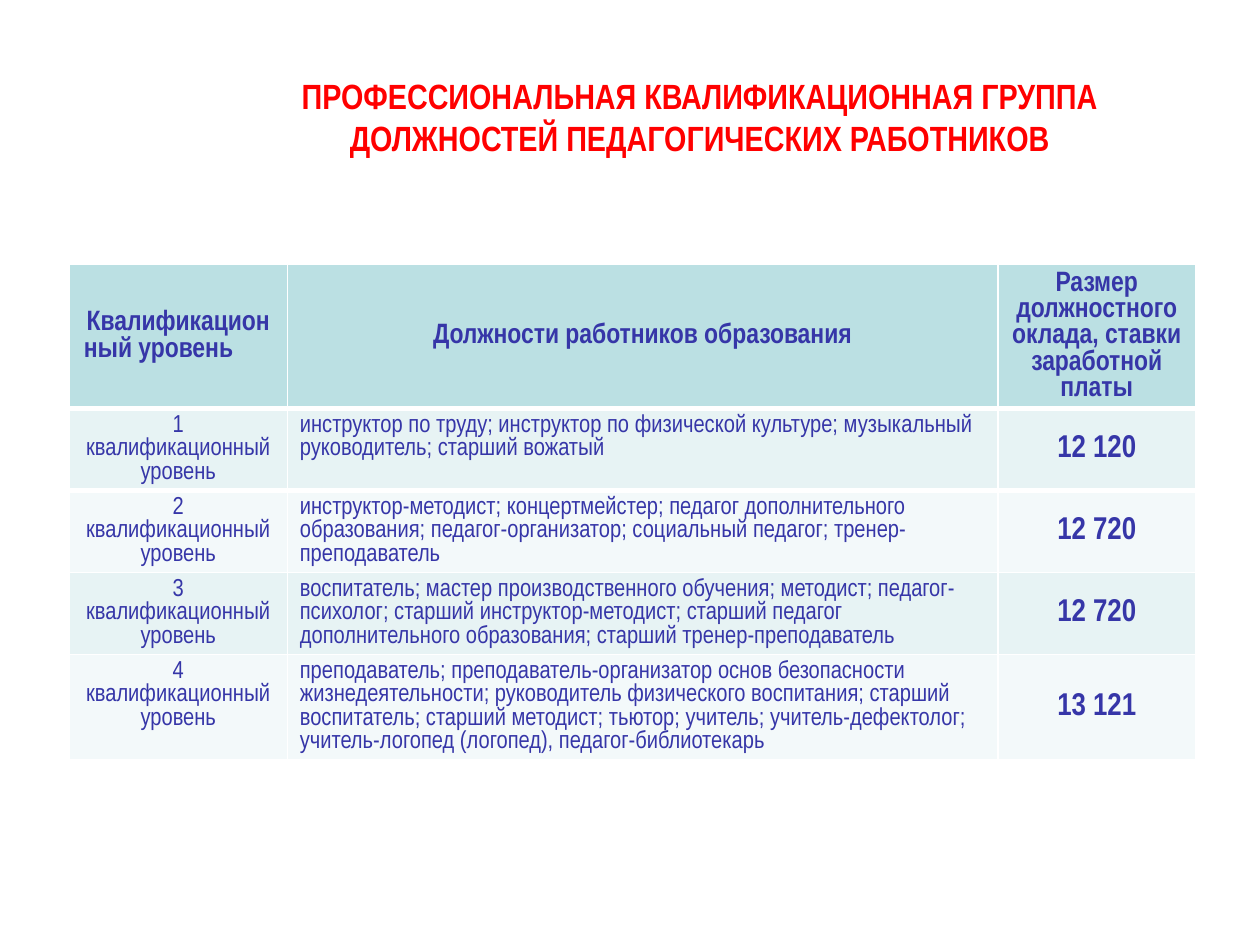
from lxml import etree
from pptx import Presentation
from pptx.dml.color import RGBColor
from pptx.enum.text import MSO_ANCHOR, PP_ALIGN
from pptx.oxml.ns import qn
from pptx.util import Inches, Pt

CENTER, LEFT = PP_ALIGN.CENTER, PP_ALIGN.LEFT
TOP, MIDDLE = MSO_ANCHOR.TOP, MSO_ANCHOR.MIDDLE
RED = RGBColor(0xFF, 0x00, 0x00)
WHITE = RGBColor(0xFF, 0xFF, 0xFF)
INDIGO = RGBColor(0x36, 0x36, 0xA8)
HEADER_FILL = RGBColor(0xBB, 0xE0, 0xE3)
BAND_FILLS = [RGBColor(0xE7, 0xF3, 0xF4), RGBColor(0xF3, 0xF9, 0xFA)]
FONT = "Arial Narrow"


def add_text(paragraph, text, size, color, bold, alignment):
    paragraph.alignment = alignment
    run = paragraph.add_run()
    run.text = text
    run.font.name = FONT
    run.font.size = Pt(size)
    run.font.bold = bold
    run.font.color.rgb = color


def fill_cell(cell, text, size, bold, alignment, anchor, fill):
    cell.fill.solid()
    cell.fill.fore_color.rgb = fill
    cell.vertical_anchor = anchor
    add_text(cell.text_frame.paragraphs[0], text, size, INDIGO, bold, alignment)


presentation = Presentation()
presentation.slide_width = Inches(10)
presentation.slide_height = Inches(7.5)
slide = presentation.slides.add_slide(presentation.slide_layouts[5])

title = slide.shapes.title
title.left, title.top = Inches(1.61), Inches(0.3)
title.width, title.height = Inches(7.89), Inches(1.25)
title.text_frame.vertical_anchor = MIDDLE
add_text(
    title.text_frame.paragraphs[0],
    "ПРОФЕССИОНАЛЬНАЯ КВАЛИФИКАЦИОННАЯ ГРУППА ДОЛЖНОСТЕЙ ПЕДАГОГИЧЕСКИХ РАБОТНИКОВ",
    20, RED, True, CENTER,
)

headers = [
    "Квалификационный уровень \t",
    "Должности работников образования",
    "Размер должностного оклада, ставки заработной платы",
]
levels = [
    ("инструктор по труду; инструктор по физической культуре; музыкальный "
     "руководитель; старший вожатый", "12 120"),
    ("инструктор-методист; концертмейстер; педагог дополнительного образования; "
     "педагог-организатор; социальный педагог; тренер-преподаватель", "12 720"),
    ("воспитатель; мастер производственного обучения; методист; педагог-психолог; "
     "старший инструктор-методист; старший педагог дополнительного образования; "
     "старший тренер-преподаватель", "12 720"),
    ("преподаватель; преподаватель-организатор основ безопасности "
     "жизнедеятельности; руководитель физического воспитания; старший воспитатель; "
     "старший методист; тьютор; учитель; учитель-дефектолог; учитель-логопед "
     "(логопед), педагог-библиотекарь", "13 121"),
]
column_widths = [1.73, 5.64, 1.57]
row_heights = [1.14, 0.65, 0.65, 0.65, 0.83]

table = slide.shapes.add_table(
    len(row_heights), len(column_widths), Inches(0.55), Inches(2.1),
    Inches(sum(column_widths)), Inches(sum(row_heights)),
).table
for column, width in zip(table.columns, column_widths):
    column.width = Inches(width)
for row, height in zip(table.rows, row_heights):
    row.height = Inches(height)

for column_index, header in enumerate(headers):
    fill_cell(table.cell(0, column_index), header, 16, True, CENTER, MIDDLE, HEADER_FILL)

for level, (positions, salary) in enumerate(levels, start=1):
    fill = BAND_FILLS[(level - 1) % 2]
    level_name = f"{level} квалификационный уровень"
    fill_cell(table.cell(level, 0), level_name, 14, False, CENTER, TOP, fill)
    fill_cell(table.cell(level, 1), positions, 14, False, LEFT, TOP, fill)
    fill_cell(table.cell(level, 2), salary, 18, True, CENTER, MIDDLE, fill)

for row_index, edge in enumerate(["a:lnB", "a:lnT"]):
    for cell in table.rows[row_index].cells:
        border = etree.Element(qn(edge), w=str(Pt(3)))
        border_fill = etree.SubElement(border, qn("a:solidFill"))
        etree.SubElement(border_fill, qn("a:srgbClr"), val=str(WHITE))
        cell._tc.get_or_add_tcPr().insert(0, border)

presentation.save("out.pptx")
